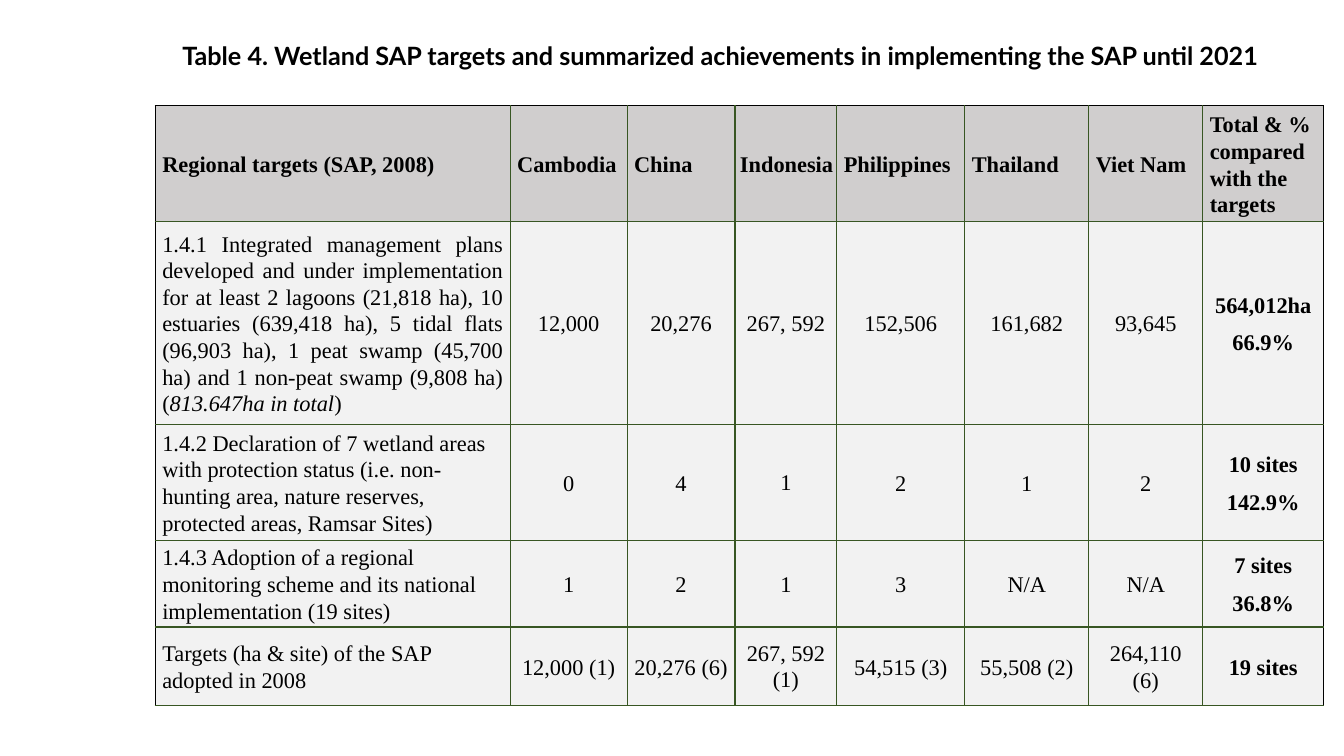
from lxml import etree
from pptx import Presentation
from pptx.dml.color import RGBColor
from pptx.enum.text import MSO_ANCHOR, MSO_AUTO_SIZE, PP_ALIGN
from pptx.oxml.ns import qn
from pptx.util import Inches, Pt

BLACK = RGBColor(0x00, 0x00, 0x00)
GREEN = RGBColor(0x38, 0x56, 0x23)
HEADER_GREY = RGBColor(0xD0, 0xCE, 0xCE)
BODY_GREY = RGBColor(0xF2, 0xF2, 0xF2)

TITLE = "Table 4. Wetland SAP targets and summarized achievements in implementing the SAP until 2021"
ITALIC = "813.647ha in total"
PLANS = ("1.4.1 Integrated management plans developed and under implementation for at least "
         "2 lagoons (21,818 ha), 10 estuaries (639,418 ha), 5 tidal flats (96,903 ha), "
         "1 peat swamp (45,700 ha) and 1 non-peat swamp (9,808 ha) (" + ITALIC + ")")
ROWS = [
    ["Regional targets (SAP, 2008)", "Cambodia", "China", "Indonesia", "Philippines",
     "Thailand", "Viet Nam", "Total & % compared with the targets"],
    [PLANS, "12,000", "20,276", "267, 592", "152,506", "161,682", "93,645",
     "564,012ha\n66.9%"],
    ["1.4.2 Declaration of 7 wetland areas with protection status (i.e. non-hunting area, "
     "nature reserves, protected areas, Ramsar Sites)",
     "0", "4", "1", "2", "1", "2", "10 sites\n142.9%"],
    ["1.4.3 Adoption of a regional monitoring scheme and its national implementation (19 sites)",
     "1", "2", "1", "3", "N/A", "N/A", "7 sites\n36.8%"],
    ["Targets (ha & site) of the SAP adopted in 2008", "12,000 (1)", "20,276 (6)",
     "267, 592 (1)", "54,515 (3)", "55,508 (2)", "264,110 (6)", "19 sites"],
]
COLUMN_WIDTHS = [3.52, 1.16, 1.07, 1.01, 1.27, 1.23, 1.13, 1.2]
ROW_HEIGHTS = [1.15, 2.01, 1.15, 0.86, 0.78]
INDONESIA = 3
LAST = len(COLUMN_WIDTHS) - 1


def style_font(font, name, size, bold):
    font.name = name
    font.size = Pt(size)
    font.bold = bold
    font.color.rgb = BLACK


def set_borders(cell, colours):
    """Draw 1 pt borders; colours go left, right, top, bottom."""
    properties = cell._tc.get_or_add_tcPr()
    for index, (side, colour) in enumerate(zip("LRTB", colours)):
        line = etree.Element(qn("a:ln" + side), w=str(Pt(1)))
        solid = etree.SubElement(line, qn("a:solidFill"))
        etree.SubElement(solid, qn("a:srgbClr"), val=str(colour))
        properties.insert(index, line)


def cell_alignment(row, column):
    if row and column:
        return PP_ALIGN.CENTER
    return PP_ALIGN.JUSTIFY if row == 1 else PP_ALIGN.LEFT


def write_paragraph(para, text, bold, alignment):
    before, italic, after = text.partition(ITALIC)
    for part in filter(None, (before, italic, after)):
        span = para.add_run()
        span.text = part
        style_font(span.font, "Times New Roman", 16, bold)
        span.font.italic = part == ITALIC
    para.alignment = alignment
    para.line_spacing = 1.07
    para.space_after = Pt(8)


def fill_cell(cell, text, row, column):
    cell.fill.solid()
    cell.fill.fore_color.rgb = BODY_GREY if row else HEADER_GREY
    set_borders(cell, [BLACK if column == 0 else GREEN,
                       BLACK if column == LAST else GREEN,
                       BLACK if row == 0 else GREEN,
                       GREEN])
    cell.vertical_anchor = MSO_ANCHOR.MIDDLE
    side, top = (0, 0) if column == INDONESIA else (0.07, 0.01)
    cell.margin_left = Inches(0.05 if column == INDONESIA and row == 0 else side)
    cell.margin_right = Inches(side)
    cell.margin_top = Inches(top)
    cell.margin_bottom = 0
    frame = cell.text_frame
    for index, line in enumerate(text.split("\n")):
        para = frame.add_paragraph() if index else frame.paragraphs[0]
        write_paragraph(para, line, row == 0 or column == LAST, cell_alignment(row, column))


def add_targets_table(page):
    table = page.shapes.add_table(len(ROWS), len(COLUMN_WIDTHS), Inches(1.54), Inches(1.05),
                                  Inches(sum(COLUMN_WIDTHS)), Inches(sum(ROW_HEIGHTS))).table
    table.first_row = False
    table.horz_banding = False
    for column, width in zip(table.columns, COLUMN_WIDTHS):
        column.width = Inches(width)
    for row, height in zip(table.rows, ROW_HEIGHTS):
        row.height = Inches(height)
    for row, texts in enumerate(ROWS):
        for column, text in enumerate(texts):
            fill_cell(table.cell(row, column), text, row, column)


def add_title(page):
    box = page.shapes.add_textbox(Inches(1.71), Inches(0.35), Inches(11.18), Inches(0.71))
    frame = box.text_frame
    frame.word_wrap = True
    frame.auto_size = MSO_AUTO_SIZE.SHAPE_TO_FIT_TEXT
    frame.text = TITLE
    style_font(frame.paragraphs[0].runs[0].font, "Lato", 18, True)


def main():
    deck = Presentation()
    deck.slide_width = Inches(13.33)
    deck.slide_height = Inches(7.5)
    page = deck.slides.add_slide(deck.slide_layouts[6])
    add_targets_table(page)
    add_title(page)
    deck.save("out.pptx")


if __name__ == "__main__":
    main()
